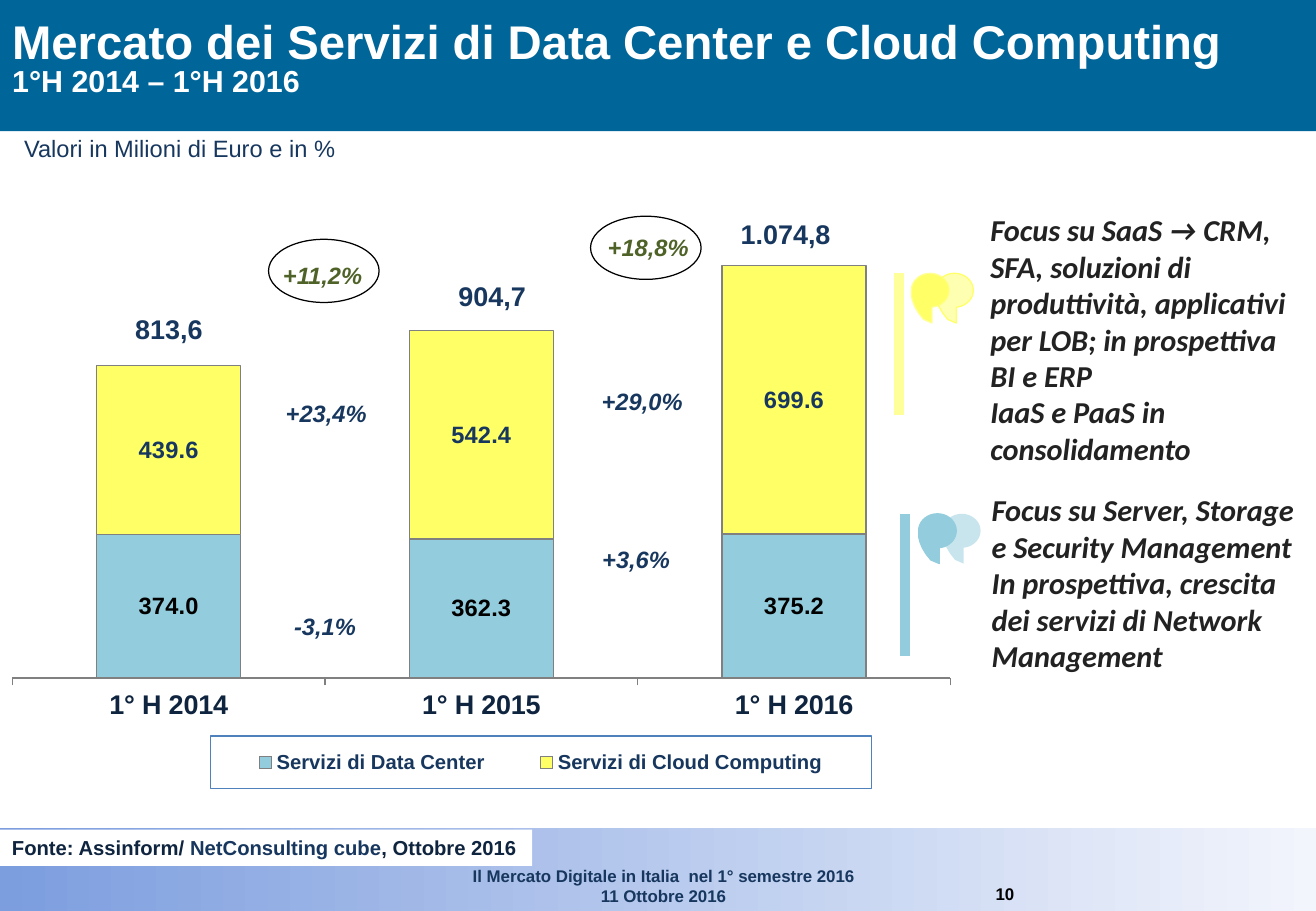
from math import cos, radians, sin

from lxml.etree import SubElement
from pptx import Presentation
from pptx.chart.data import CategoryChartData
from pptx.dml.color import RGBColor
from pptx.enum.chart import XL_CHART_TYPE, XL_LEGEND_POSITION, XL_TICK_MARK
from pptx.enum.shapes import MSO_CONNECTOR, MSO_SHAPE
from pptx.enum.text import MSO_ANCHOR, MSO_AUTO_SIZE, PP_ALIGN
from pptx.oxml import parse_xml
from pptx.oxml.ns import nsdecls, qn
from pptx.util import Inches, Pt

WHITE = RGBColor(0xFF, 0xFF, 0xFF)
BLACK = RGBColor(0, 0, 0)
HEADER_BLUE = RGBColor(0x00, 0x66, 0x99)
FOOTER_BLUE = RGBColor(0x7C, 0x9D, 0xDE)
FOOTER_PALE = RGBColor(0xF2, 0xF5, 0xFC)
NAVY = RGBColor(0x17, 0x37, 0x5E)
DARK_NAVY = RGBColor(0x0F, 0x24, 0x3E)
GREEN = RGBColor(0x4F, 0x62, 0x28)
GREY = RGBColor(0x80, 0x80, 0x80)
INK = RGBColor(0x22, 0x22, 0x23)
AQUA = RGBColor(0x93, 0xCD, 0xDD)
YELLOW = RGBColor(0xFF, 0xFF, 0x66)
PALE_YELLOW = RGBColor(0xFF, 0xFF, 0x99)


def place(shape, box):
    shape.left, shape.top, shape.width, shape.height = map(Inches, box)


def set_font(font, size, color, bold=True, italic=False, name="Arial"):
    font.name, font.size, font.bold, font.italic = name, Pt(size), bold, italic
    font.color.rgb = color


def set_layout(parent, index, box, inner=False):
    """Fix a chart part at fractions of the chart area."""
    for old in parent.findall(qn("c:layout")):
        parent.remove(old)
    layout = parse_xml(f"<c:layout {nsdecls('c')}><c:manualLayout/></c:layout>")
    settings = [("layoutTarget", "inner")] if inner else []
    settings += [("xMode", "edge"), ("yMode", "edge"), *zip("xywh", box)]
    for tag, value in settings:
        SubElement(layout[0], qn(f"c:{tag}")).set("val", str(value))
    parent.insert(index, layout)


class MarketSlide:
    def __init__(self, deck):
        self.slide = deck.slides.add_slide(deck.slide_layouts[3])
        self.shapes = self.slide.shapes

    def shape(self, kind, box, fill=None, outline=None):
        shape = self.shapes.add_shape(kind, *map(Inches, box))
        self.finish(shape, fill, outline)
        return shape

    def finish(self, shape, fill, outline):
        shape.shadow.inherit = False
        if fill is None:
            shape.fill.background()
        else:
            shape.fill.solid()
            shape.fill.fore_color.rgb = fill
        if outline is None:
            shape.line.fill.background()
        else:
            shape.line.color.rgb = outline
            shape.line.width = Pt(0.75)

    def label(self, shape, text, size, color, bold=True, italic=False,
              align=PP_ALIGN.CENTER, anchor=MSO_ANCHOR.MIDDLE):
        frame = shape.text_frame
        frame.text = text
        frame.word_wrap = False
        frame.vertical_anchor = anchor
        for paragraph in frame.paragraphs:
            paragraph.alignment = align
            for run in paragraph.runs:
                set_font(run.font, size, color, bold, italic)

    def text(self, box, text, size, color, **style):
        self.label(self.shapes.add_textbox(*map(Inches, box)), text, size, color, **style)

    def growth(self, box, text, color):
        self.label(self.shape(MSO_SHAPE.ROUNDED_RECTANGLE, box), text, 14, color, italic=True)

    def title(self, heading, period):
        title = self.shapes.title
        place(title, (0, 0, 10.83, 1))
        self.label(title, f"{heading}\v{period}", 28, WHITE, align=PP_ALIGN.LEFT)
        title.text_frame.word_wrap = True
        title.text_frame.auto_size = MSO_AUTO_SIZE.NONE
        paragraph = title.text_frame.paragraphs[0]
        paragraph.line_spacing = 0.8
        paragraph.runs[1].font.size = Pt(18)

    def focus(self, index, box, lines, anchor):
        body = self.slide.placeholders[index]
        place(body, box)
        frame = body.text_frame
        frame.text = "\n".join(lines)
        frame.auto_size = MSO_AUTO_SIZE.NONE
        frame.vertical_anchor = anchor
        frame.margin_left = frame.margin_right = frame.margin_top = frame.margin_bottom = 0
        for paragraph in frame.paragraphs:
            paragraph.space_before = Pt(0)
            properties = paragraph._p.get_or_add_pPr()
            properties.set("marL", str(Inches(0.01)))
            properties.set("indent", "0")
            SubElement(properties, qn("a:buNone"))
            set_font(paragraph.runs[0].font, 18, INK, italic=True, name="Calibri")

    def quote_mark(self, left, top, fill, outline, alpha=None):
        """Draw a round head whose tail ends in a point below it."""
        head = [(0.155 + 0.155 * cos(radians(angle)), 0.14 + 0.14 * sin(radians(angle)))
                for angle in range(80, -181, -10)]
        tail = [(0, 0.19), (0.01, 0.23), (0.03, 0.28), (0.06, 0.33), (0.1, 0.38), (0.17, 0.41)]
        points = [(Inches(left + x), Inches(top + y)) for x, y in [(0.17, 0.28), *head, *tail]]
        builder = self.shapes.build_freeform(*points[0])
        builder.add_line_segments(points[1:], close=True)
        mark = builder.convert_to_shape()
        self.finish(mark, fill, outline)
        if alpha:
            color = mark._element.spPr.find(qn("a:solidFill"))[0]
            SubElement(color, qn("a:alpha")).set("val", str(alpha * 1000))

    def bar(self, x, top, color):
        bar = self.shapes.add_connector(MSO_CONNECTOR.STRAIGHT, Inches(x), Inches(top),
                                        Inches(x), Inches(top + 1.17))
        bar.line.color.rgb = color
        bar.line.width = Pt(6)
        SubElement(bar._element.spPr, qn("a:effectLst"))

    def chart(self, box, periods, services):
        data = CategoryChartData(number_format="#,##0.0")
        data.categories = periods
        for name, values, *_ in services:
            data.add_series(name, values)
        chart = self.shapes.add_chart(XL_CHART_TYPE.COLUMN_STACKED, *map(Inches, box), data).chart
        chart.has_title = False
        set_font(chart.font, 18, BLACK, bold=False)
        plot = chart.plots[0]
        plot.gap_width, plot.overlap, plot.vary_by_categories = 117, 100, False
        for series, (_, _, fill, label_color) in zip(plot.series, services):
            series.format.fill.solid()
            series.format.fill.fore_color.rgb = fill
            series.format.line.color.rgb = GREY
            series.format.line.width = Pt(0.75)
            labels = series.data_labels
            labels.show_value = True
            labels.number_format, labels.number_format_is_linked = "#,##0.0", False
            set_font(labels.font, 14, label_color)
        values, categories = chart.value_axis, chart.category_axis
        values.minimum_scale, values.maximum_scale = 0, 1100
        values.has_major_gridlines = values.visible = False
        categories.major_tick_mark = XL_TICK_MARK.OUTSIDE
        categories.format.line.color.rgb = GREY
        set_font(categories.tick_labels.font, 16, DARK_NAVY)
        set_layout(chart._chartSpace.chart.plotArea, 0, (0.015, 0.03, 0.952, 0.759), inner=True)
        chart.has_legend = True
        legend = chart.legend
        legend.position, legend.include_in_layout = XL_LEGEND_POSITION.BOTTOM, False
        set_font(legend.font, 12, NAVY)
        set_layout(legend._element, 1, (0.216, 0.893, 0.671, 0.094))
        legend._element.find(qn("c:overlay")).addnext(parse_xml(
            f'<c:spPr {nsdecls("c", "a")}><a:ln w="9525"><a:solidFill>'
            '<a:srgbClr val="4F81BD"/></a:solidFill></a:ln></c:spPr>'))


def main():
    deck = Presentation()
    deck.slide_width, deck.slide_height = Inches(10.83), Inches(7.5)
    market = MarketSlide(deck)
    header = market.shape(MSO_SHAPE.RECTANGLE, (0, 0, 10.83, 1.08), HEADER_BLUE)
    market.shapes.title._element.addprevious(header._element)
    market.title("Mercato dei Servizi di Data Center e Cloud Computing", "1°H 2014 – 1°H 2016")

    footer = market.shape(MSO_SHAPE.RECTANGLE, (0, 6.82, 10.83, 0.68), FOOTER_BLUE)
    footer.fill.gradient()
    footer.fill.gradient_angle = 0
    for stop, position, color in zip(footer.fill.gradient_stops, (0, 1), (FOOTER_BLUE, FOOTER_PALE)):
        stop.position, stop.color.rgb = position, color
    market.text((2.43, 7.07, 6.06, 0.44),
                "Il Mercato Digitale in Italia  nel 1° semestre 2016\n11 Ottobre 2016", 10, NAVY)
    market.text((7.97, 7.22, 0.6, 0.27), "10", 10, BLACK)
    market.text((0.09, 1.05, 2.78, 0.34), "Valori in Milioni di Euro e in %", 14, NAVY, bold=False)

    source = market.shape(MSO_SHAPE.RECTANGLE, (0, 6.83, 4.38, 0.3), WHITE)
    market.label(source, "Fonte: Assinform/ ", 12, DARK_NAVY, align=PP_ALIGN.LEFT)
    for part, color in (("NetConsulting cube", NAVY), (", Ottobre 2016", DARK_NAVY)):
        run = source.text_frame.paragraphs[0].add_run()
        run.text = part
        set_font(run.font, 12, color)

    market.chart((-0.02, 1.97, 8.11, 4.58), ("1° H 2014", "1° H 2015", "1° H 2016"), (
        ("Servizi di Data Center", (374, 362.3, 375.2), AQUA, BLACK),
        ("Servizi di Cloud Computing", (439.6, 542.4, 699.6), YELLOW, NAVY)))
    for left, top, width, total in ((1.01, 2.52, 0.76, "813,6"), (3.67, 2.25, 0.76, "904,7"),
                                    (5.99, 1.74, 0.95, "1.074,8")):
        market.text((left, top, width, 0.37), total, 16, NAVY)
    for left, top, width, change, color in (
            (2.21, 2.08, 0.89, "+11,2%", GREEN), (2.13, 3.22, 1.11, "+23,4%", NAVY),
            (2.16, 4.97, 1.03, "-3,1%", NAVY), (4.88, 1.85, 0.91, "+18,8%", GREEN),
            (4.73, 3.12, 1.11, "+29,0%", NAVY), (4.69, 4.42, 1.09, "+3,6%", NAVY)):
        market.growth((left, top, width, 0.37), change, color)
    for left, top in ((2.21, 1.97), (4.86, 1.78)):
        market.shape(MSO_SHAPE.OVAL, (left, top, 0.91, 0.52), outline=BLACK)

    for left, top, fill, first_outline, second_outline, bar_color, bar_x in (
            (7.5, 2.25, YELLOW, PALE_YELLOW, YELLOW, PALE_YELLOW, 7.4),
            (7.56, 4.23, AQUA, AQUA, None, AQUA, 7.45)):
        market.quote_mark(left, top, fill, first_outline)
        market.quote_mark(left + 0.2, top, fill, second_outline, alpha=50)
        market.bar(bar_x, top, bar_color)
    market.focus(1, (8.14, 1.74, 2.54, 2.12), (
        "Focus su SaaS → CRM, SFA, soluzioni di produttività, applicativi per LOB; "
        "in prospettiva BI e ERP", "IaaS e PaaS in consolidamento"), MSO_ANCHOR.TOP)
    market.focus(2, (8.15, 4.04, 2.54, 1.51), (
        "Focus su Server, Storage e Security Management",
        "In prospettiva, crescita dei servizi di Network Management"), MSO_ANCHOR.MIDDLE)
    deck.save("out.pptx")


if __name__ == "__main__":
    main()
